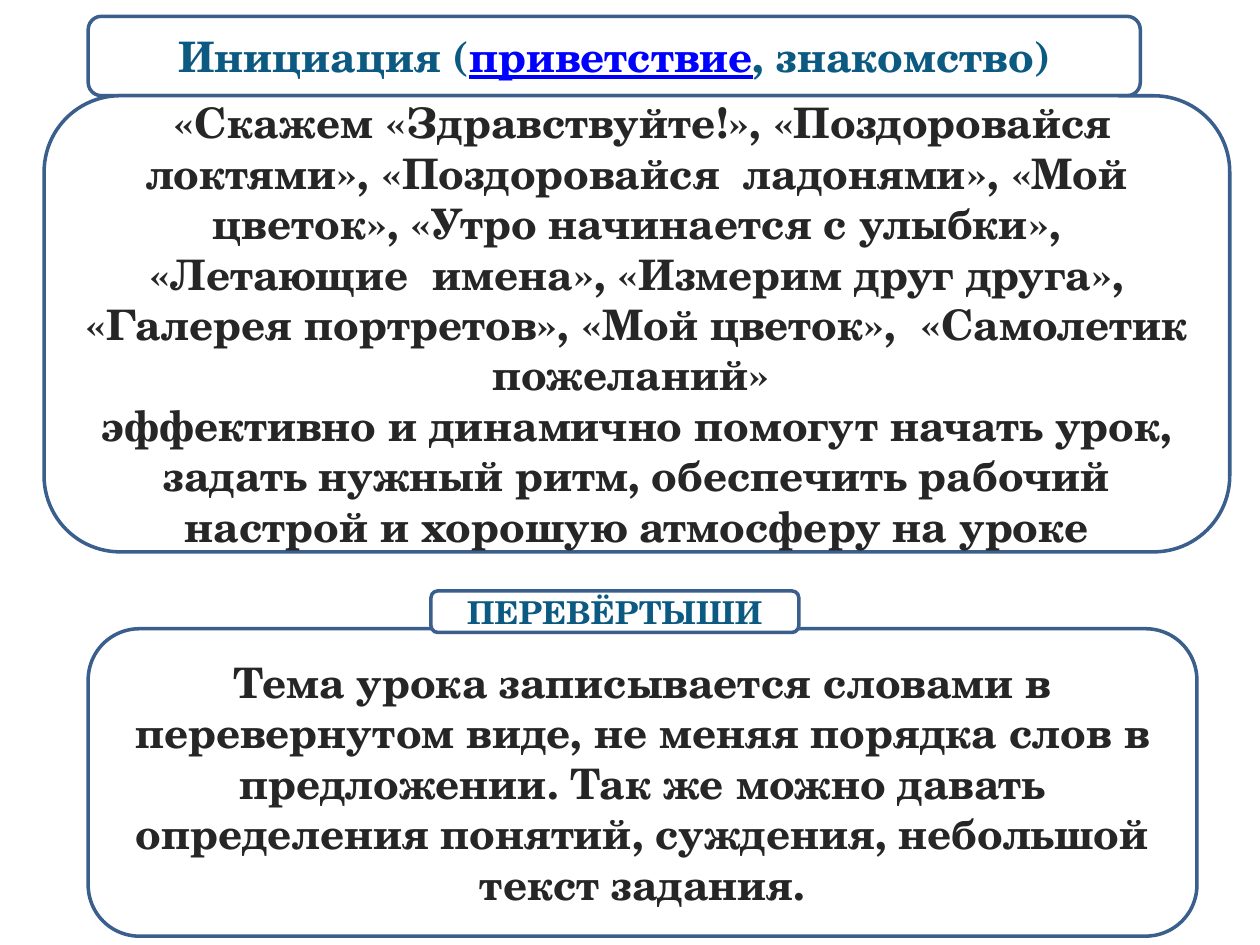
from dataclasses import dataclass

from pptx import Presentation
from pptx import util as u
from pptx.dml.color import RGBColor
from pptx.enum import shapes, text


@dataclass(frozen=True)
class Theme:
    font: str = "TeX Gyre Schola"
    paper: str = "FFFFFF"
    outline: str = "3A5F8C"
    heading: str = "0C5A82"
    body: str = "262626"
    link: str = "0000FF"
    large: int = 24
    small: int = 18
    line: int = 2


class Board:
    """Places rounded panels on a grid of hundredths of an inch."""

    COLUMNS, ROWS = 1000, 750

    def __init__(self, deck, theme):
        self.theme = theme
        self.column = deck.slide_width / self.COLUMNS
        self.row = deck.slide_height / self.ROWS
        self.page = deck.slides.add_slide(deck.slide_layouts[6])

    def panel(self, column, row, columns, rows):
        box = self.page.shapes.add_shape(
            shapes.MSO_SHAPE.ROUNDED_RECTANGLE,
            round(column * self.column), round(row * self.row),
            round(columns * self.column), round(rows * self.row))
        box.shadow.inherit = False
        box.fill.solid()
        box.fill.fore_color.rgb = RGBColor.from_string(self.theme.paper)
        box.line.color.rgb = RGBColor.from_string(self.theme.outline)
        box.line.width = u.Pt(self.theme.line)
        box.text_frame.word_wrap = True
        box.text_frame.vertical_anchor = text.MSO_ANCHOR.MIDDLE
        return box

    def style(self, span, color, size):
        span.font.name = self.theme.font
        span.font.size = u.Pt(size)
        span.font.bold = True
        span.font.color.rgb = RGBColor.from_string(color)

    def label(self, box, wording, color, size):
        box.text_frame.text = wording
        for para in box.text_frame.paragraphs:
            para.alignment = text.PP_ALIGN.CENTER
            for span in para.runs:
                self.style(span, color, size)

    def heading(self, place, wording, size):
        box = self.panel(*place)
        self.label(box, wording, self.theme.heading, size)
        return box.text_frame.paragraphs[0]

    def body(self, place, wording):
        self.label(self.panel(*place), wording, self.theme.body, self.theme.large)

    def add_span(self, para, wording, color, underline=False):
        span = para.add_run()
        span.text = wording
        self.style(span, color, self.theme.large)
        span.font.underline = underline


def main():
    deck = Presentation()
    deck.slide_width, deck.slide_height = u.Inches(10), u.Inches(7.5)
    theme = Theme()
    board = Board(deck, theme)

    title = board.heading((70, 13, 835, 63), "Инициация (", theme.large)
    board.add_span(title, "приветствие", theme.link, underline=True)
    board.add_span(title, ", знакомство)", theme.heading)

    board.body(
        (70, 499, 880, 244),
        "Тема урока записывается словами в перевернутом виде, не меняя порядка "
        "слов в предложении. Так же можно давать определения понятий, суждения, "
        "небольшой текст задания.")
    board.heading((342, 469, 292, 33), "ПЕРЕВЁРТЫШИ", theme.small)
    board.body(
        (35, 76, 941, 362),
        " «Скажем «Здравствуйте!», «Поздоровайся локтями», «Поздоровайся  "
        "ладонями», «Мой цветок», «Утро начинается с улыбки», «Летающие  имена», "
        "«Измерим друг друга», «Галерея портретов», «Мой цветок»,  «Самолетик "
        "пожеланий» \n"
        "эффективно и динамично помогут начать урок, задать нужный ритм, "
        "обеспечить рабочий настрой и хорошую атмосферу на уроке")

    deck.save("out.pptx")


if __name__ == "__main__":
    main()
